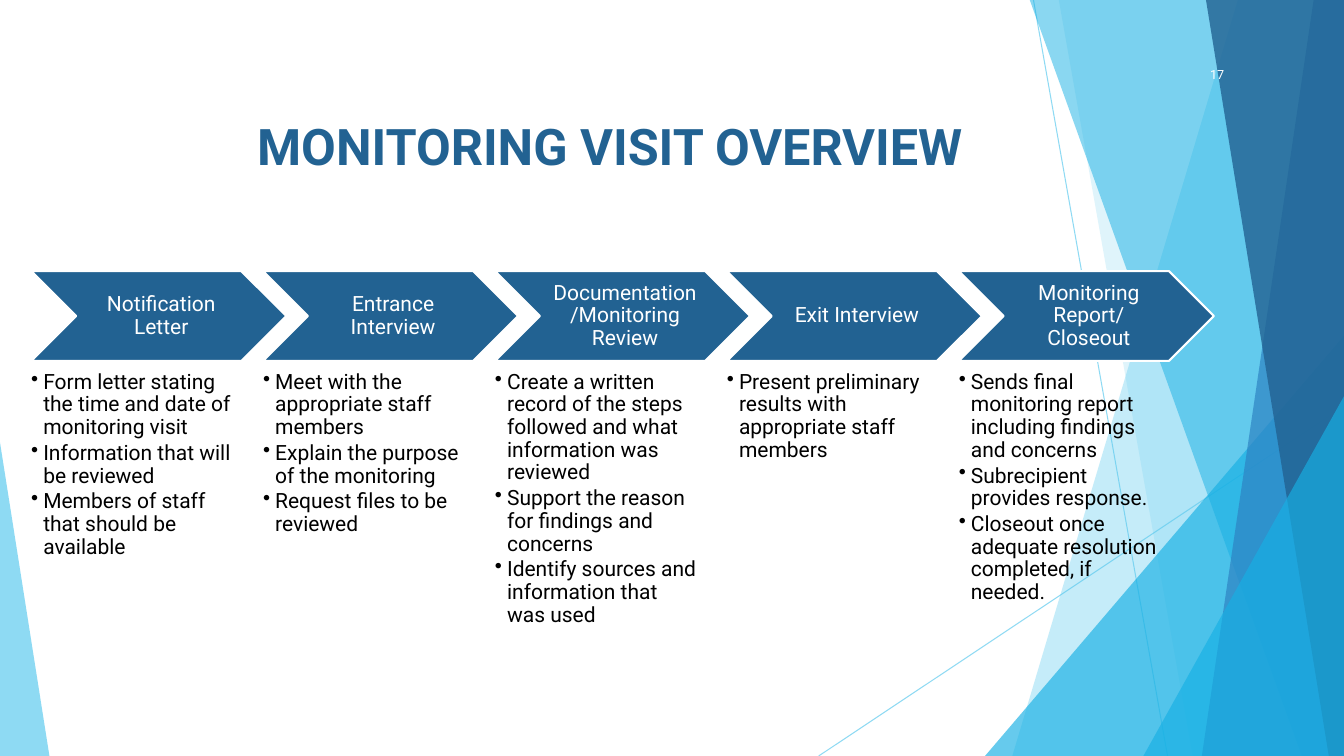
"""Build the monitoring visit overview slide."""
from dataclasses import dataclass
from lxml import etree
from pptx import Presentation
from pptx.dml.color import RGBColor
from pptx.enum import shapes as kinds, text as txt
from pptx.oxml import ns
from pptx.util import Inches, Pt


@dataclass(frozen=True)
class Theme:
    font: str = "Roboto"
    navy: str = "226292"
    blue: str = "2E83C3"
    cyan: str = "17B0E4"
    sky: str = "5FCBEF"
    white: str = "FFFFFF"
    black: str = "000000"
    head: int = 36
    body: int = 15
    small: int = 9


T = Theme()
TITLE = "MONITORING VISIT OVERVIEW"
NUMBER = "17"
STEPS = [
    ("Notification Letter", [
        "Form letter stating the time and date of monitoring visit",
        "Information that will be reviewed",
        "Members of staff that should be available"]),
    ("Entrance Interview", [
        "Meet with the appropriate staff members",
        "Explain the purpose of the monitoring",
        "Request files to be reviewed"]),
    ("Documentation /Monitoring Review", [
        "Create a written record of the steps followed and what information was reviewed",
        "Support the reason for findings and concerns",
        "Identify sources and information that was used"]),
    ("Exit Interview", [
        "Present preliminary results with appropriate staff members"]),
    ("Monitoring Report/ Closeout", [
        "Sends final monitoring report including findings and concerns",
        "Subrecipient provides response.",
        "Closeout once adequate resolution completed, if needed."]),
]
WIDE, HIGH, TOP = 13.33, 7.5, -0.01
RAYS = [(10.25, 0, 11.58, HIGH), (WIDE, 4.03, 8.12, HIGH)]
# name: (upper left x, lower left x) for bands, (left, top, width, height, tip) for wedges
PANELS = [
    ("band", (12.28, 10.04), T.sky, 36),
    ("band", (10.5, 11.83), T.sky, 20),
    ("wedge", (9.77, 3.33, 3.56, 4.17, 1), T.cyan, 66),
    ("band", (10.21, 12.91), T.cyan, 50),
    ("band", (13.03, 11.92), T.blue, 70),
    ("band", (11.96, 13.18), T.navy, 80),
    ("wedge", (11.34, 3.93, 1.99, 3.57, 1), T.cyan, 66),
    ("wedge", (0, 4.39, 0.49, 3.11, 0), T.sky, 70),
]
LEFT, PITCH = 0.31, 2.3


def box(*sizes):
    return [Inches(size) for size in sizes]


def paint(fill, color, alpha=100):
    fill.solid()
    fill.fore_color.rgb = RGBColor.from_string(color)
    if alpha < 100:
        tone = fill._xPr.find(".//" + ns.qn("a:srgbClr"))
        etree.SubElement(tone, ns.qn("a:alpha"), val=str(alpha * 1000))


def write(shape, lines, size, color, align, anchor, inset=None, bold=False):
    frame = shape.text_frame
    frame.text = "\n".join(lines)
    frame.word_wrap = True
    frame.auto_size = txt.MSO_AUTO_SIZE.NONE
    frame.vertical_anchor = anchor
    if inset:
        (frame.margin_left, frame.margin_top,
         frame.margin_right, frame.margin_bottom) = box(*inset)
    for par in frame.paragraphs:
        par.alignment = align
        for run in par.runs:
            run.font.name, run.font.size, run.font.bold = T.font, Pt(size), bold
            run.font.color.rgb = RGBColor.from_string(color)
    return frame.paragraphs


def ray(slide, ends):
    line = slide.shapes.add_connector(kinds.MSO_CONNECTOR.STRAIGHT, *box(*ends))
    line.line.width = Pt(0.75)
    paint(line.line.fill, T.sky, 70)
    etree.SubElement(line._element.spPr, ns.qn("a:effectLst"))


def panel(slide, kind, place, color, alpha):
    if kind == "band":
        high, low = place
        pen = slide.shapes.build_freeform(*box(high, TOP), scale=1.0)
        pen.add_line_segments(
            [box(*spot) for spot in ((WIDE, TOP), (WIDE, HIGH), (low, HIGH))])
        shape = pen.convert_to_shape()
    else:
        shape = slide.shapes.add_shape(
            kinds.MSO_SHAPE.ISOSCELES_TRIANGLE, *box(*place[:4]))
        shape.adjustments[0] = place[4]
    shape.shadow.inherit = False
    shape.line.fill.background()
    paint(shape.fill, color, alpha)


def step(slide, left, name, notes):
    arrow = slide.shapes.add_shape(kinds.MSO_SHAPE.CHEVRON, *box(left, 2.69, 2.53, 0.89))
    arrow.shadow.inherit = False
    paint(arrow.fill, T.navy)
    paint(arrow.line.fill, T.white)
    arrow.line.width = Pt(1.5)
    label = write(arrow, [name], T.body, T.white, txt.PP_ALIGN.CENTER,
                  txt.MSO_ANCHOR.MIDDLE, (0.07, 0.02, 0.02, 0.02))
    label[0].line_spacing = 0.9
    area = slide.shapes.add_textbox(*box(left, 3.68, 2.03, 2.48))
    for par in write(area, notes, T.body, T.black, txt.PP_ALIGN.LEFT,
                     txt.MSO_ANCHOR.TOP, (0, 0, 0, 0)):
        par.line_spacing = 0.9
        par.space_after = Pt(2.25)
        props = par._p.get_or_add_pPr()
        props.set("marL", str(Inches(0.12)))
        props.set("indent", str(-Inches(0.12)))
        etree.SubElement(props, ns.qn("a:buChar"), char="•")


def main():
    deck = Presentation()
    deck.slide_width, deck.slide_height = box(WIDE, HIGH)
    slide = deck.slides.add_slide(deck.slide_layouts[5])
    for ends in RAYS:
        ray(slide, ends)
    for item in PANELS:
        panel(slide, *item)
    title = slide.shapes.title
    title.left, title.top, title.width, title.height = box(1.26, 1.06, 9.58, 0.77)
    write(title, [TITLE], T.head, T.navy, txt.PP_ALIGN.CENTER,
          txt.MSO_ANCHOR.MIDDLE, bold=True)
    page = slide.shapes.add_textbox(*box(11.32, 0.32, 0.92, 0.84))
    write(page, [NUMBER], T.small, T.white, txt.PP_ALIGN.RIGHT, txt.MSO_ANCHOR.MIDDLE)
    for i, (name, notes) in enumerate(STEPS):
        step(slide, LEFT + i * PITCH, name, notes)
    deck.save("out.pptx")


if __name__ == "__main__":
    main()
